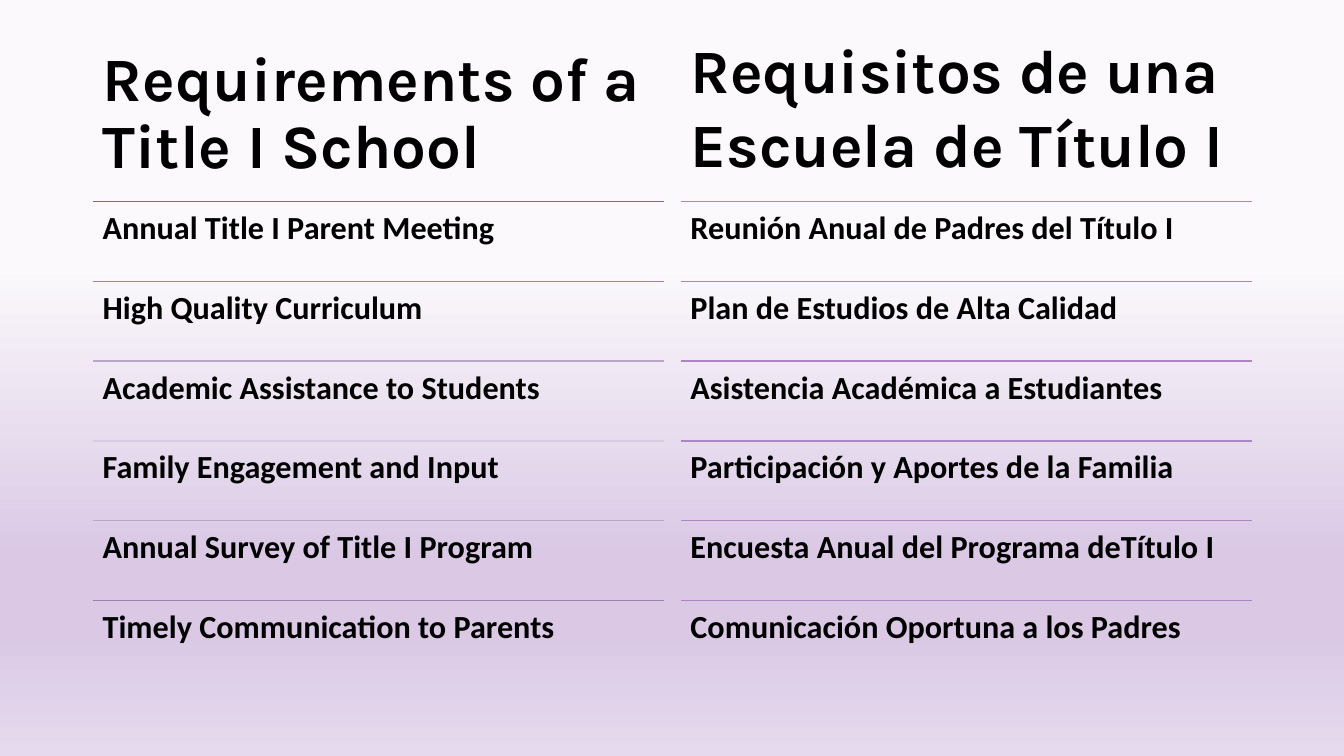
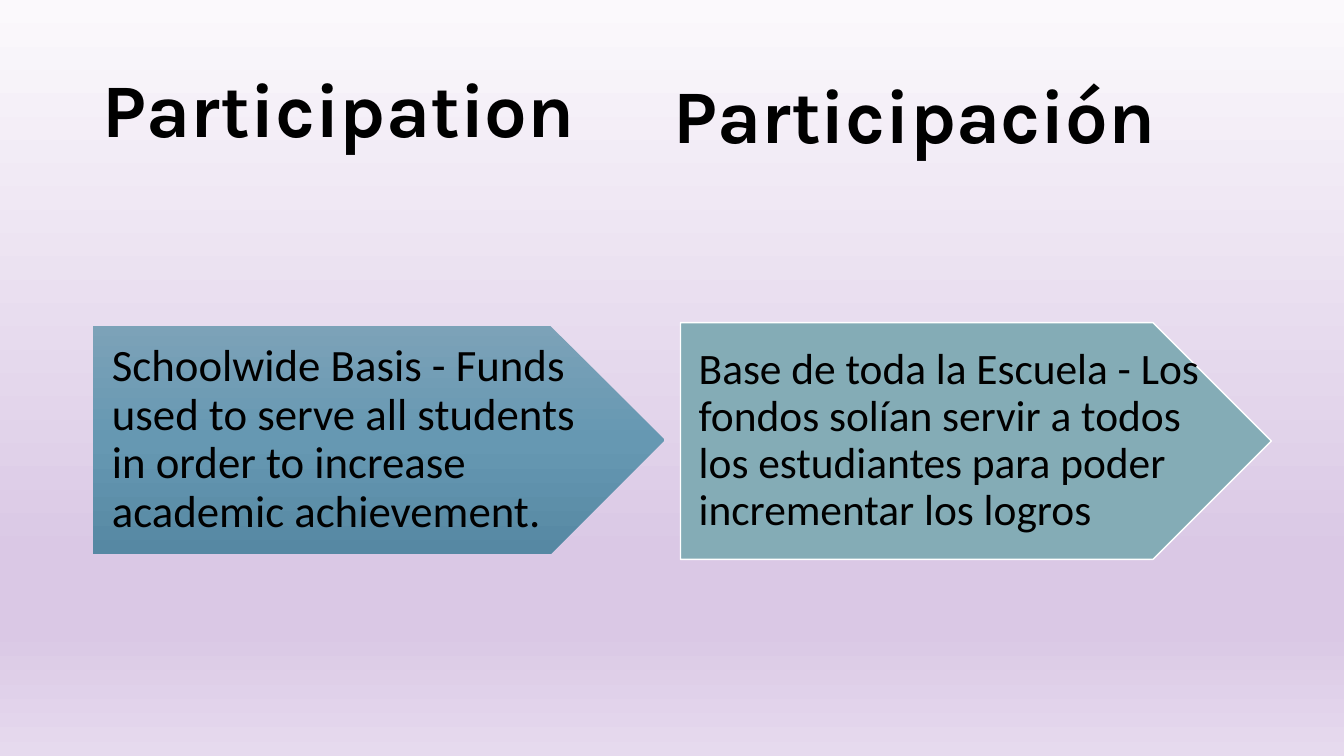
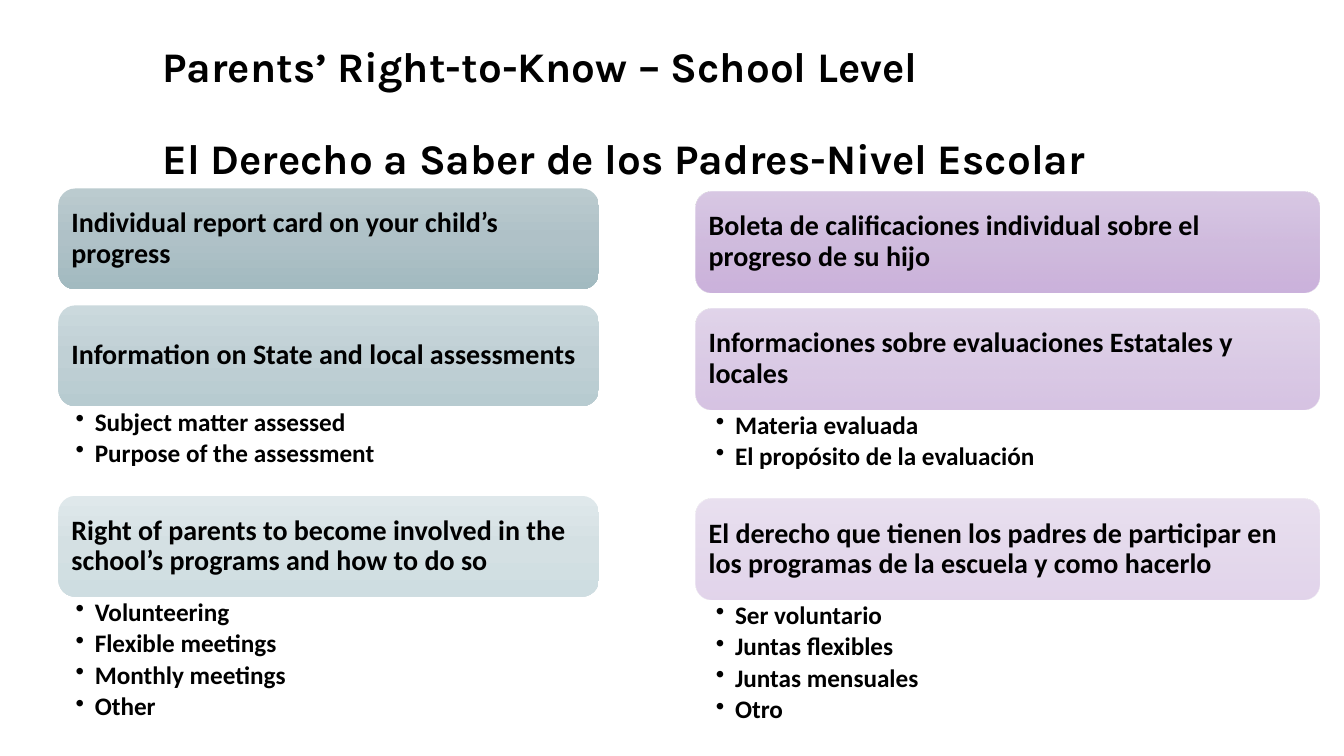
from dataclasses import dataclass

from lxml import etree
from pptx import Presentation
from pptx.dml.color import RGBColor
from pptx.enum.shapes import MSO_CONNECTOR, MSO_SHAPE
from pptx.enum.text import MSO_ANCHOR, MSO_AUTO_SIZE, PP_ALIGN
from pptx.oxml.ns import qn
from pptx.util import Inches, Pt

TOP, MIDDLE, BOTTOM = MSO_ANCHOR.TOP, MSO_ANCHOR.MIDDLE, MSO_ANCHOR.BOTTOM
LEFT = PP_ALIGN.LEFT
NO_AUTOFIT = MSO_AUTO_SIZE.NONE
STRAIGHT = MSO_CONNECTOR.STRAIGHT
ARROW, CARD = MSO_SHAPE.PENTAGON, MSO_SHAPE.ROUNDED_RECTANGLE
TITLE_ONLY = 5

COLORS = {
    "text": "000000",
    "white": "FFFFFF",
    "pale": "FBF9FC",
    "lilac": "DAC8E5",
    "light_lilac": "E6DAEE",
    "spanish_rule": "AD84C6",
    "spanish_arrow": "84ACB6",
}
ENGLISH_RULES = ["806292", "9E81B1", "BCA5CB", "D9CBE3", "BCA5CB", "9E81B1"]
ARROW_BLUES = ["7CA2B8", "6698B2", "5688A3"]
CARD_TEALS = [
    ["BBCBCF", "AFC1C7", "A2BAC0"],
    ["CBD9DD", "C0D0D5", "B7CBD0"],
    ["DFE8EB", "D4E0E3", "CEDDE1"],
]
CARD_PURPLES = ["D5C3E2", "CCB6DB", "C6AAD8"]
CARD_OPACITIES = [90, 70, 50]
HEADING_FONT, BODY_FONT = "Karla", "Calibri"


@dataclass
class Box:
    """Left, top, width and height in inches."""
    left: float
    top: float
    width: float
    height: float

    def lengths(self):
        return [Inches(v) for v in (self.left, self.top, self.width, self.height)]


@dataclass
class TextStyle:
    size: float
    font: str = BODY_FONT
    bold: bool = True
    line_spacing: float = 0.9
    space_before: float = 0
    space_after: float = 0
    bullet_indent: float = 0
    anchor: MSO_ANCHOR = TOP
    insets: tuple = (0.1, 0.05, 0.1, 0.05)


@dataclass
class RequirementColumn:
    left: float
    rule_colors: list
    requirements: list


@dataclass
class Right:
    heading: str
    details: list


@dataclass
class RightsColumn:
    left: float
    top: float
    width: float
    detail_inset: float
    gradients: list
    opacities: list
    rights: list


ROW_STYLE = TextStyle(23, insets=(0.1,) * 4)
CARD_STYLE = TextStyle(20, anchor=MIDDLE, insets=(0.08,) * 4)


def rgb(hex_color: str) -> RGBColor:
    return RGBColor.from_string(hex_color)


def add_bullet(paragraph, indent: float) -> None:
    properties = paragraph._p.get_or_add_pPr()
    properties.set("marL", str(Inches(indent)))
    properties.set("indent", str(-Inches(indent)))
    bullet = etree.Element(qn("a:buChar"), char="•")
    defaults = properties.find(qn("a:defRPr"))
    defaults.addprevious(bullet)


def write(frame, lines: list, style: TextStyle) -> None:
    frame.word_wrap = True
    frame.auto_size = NO_AUTOFIT
    frame.vertical_anchor = style.anchor
    (frame.margin_left, frame.margin_top,
     frame.margin_right, frame.margin_bottom) = map(Inches, style.insets)
    frame.text = "\n".join(lines)
    for index, paragraph in enumerate(frame.paragraphs):
        paragraph.alignment = LEFT
        paragraph.line_spacing = style.line_spacing
        paragraph.space_before = Pt(style.space_before if index else 0)
        paragraph.space_after = Pt(style.space_after)
        font = paragraph.font
        font.name, font.size, font.bold = style.font, Pt(style.size), style.bold
        font.color.rgb = rgb(COLORS["text"])
        if style.bullet_indent:
            add_bullet(paragraph, style.bullet_indent)


def fill_down(fill, owner, stops: list, opacity: int = 100) -> None:
    """Give fill a top-to-bottom gradient of (percent, colour) stops."""
    fill.gradient()
    fill.gradient_angle = 270
    stop_list = next(owner.iter(qn("a:gsLst")))
    for old_stop in list(stop_list):
        stop_list.remove(old_stop)
    for percent, color in stops:
        stop = etree.SubElement(stop_list, qn("a:gs"), pos=str(percent * 1000))
        shade = etree.SubElement(stop, qn("a:srgbClr"), val=color)
        if opacity < 100:
            etree.SubElement(shade, qn("a:alpha"), val=str(opacity * 1000))


def add_slide(deck, title: list, box: Box, style: TextStyle):
    slide = deck.slides.add_slide(deck.slide_layouts[TITLE_ONLY])
    heading = slide.shapes.title
    heading.left, heading.top, heading.width, heading.height = box.lengths()
    write(heading.text_frame, title, style)
    return slide


def set_lilac_background(slide, first_stop: int) -> None:
    stops = [(first_stop, COLORS["pale"]), (74, COLORS["lilac"]),
             (83, COLORS["lilac"]), (100, COLORS["light_lilac"])]
    fill_down(slide.background.fill, slide._element, stops)


def add_text(slide, lines: list, box: Box, style: TextStyle) -> None:
    write(slide.shapes.add_textbox(*box.lengths()).text_frame, lines, style)


def add_rule(slide, left: float, top: float, width: float, color: str) -> None:
    rule = slide.shapes.add_connector(
        STRAIGHT, Inches(left), Inches(top), Inches(left + width), Inches(top))
    rule.line.color.rgb = rgb(color)
    rule.line.width = Pt(1)
    etree.SubElement(rule._element.spPr, qn("a:effectLst"))


def add_panel(slide, preset, text: str, box: Box, style: TextStyle):
    panel = slide.shapes.add_shape(preset, *box.lengths())
    panel.shadow.inherit = False
    panel.line.fill.background()
    write(panel.text_frame, [text], style)
    return panel


def shade_panel(panel, colors: list, opacity: int = 100) -> None:
    fill_down(panel.fill, panel._element, list(zip((0, 50, 100), colors)), opacity)


def add_requirements(slide, column: RequirementColumn) -> None:
    top, width, row_height = 2, 5.67, 4.75 / 6
    for row, (color, requirement) in enumerate(
            zip(column.rule_colors, column.requirements)):
        row_top = top + row * row_height
        add_rule(slide, column.left, row_top, width, color)
        add_text(slide, [requirement],
                 Box(column.left, row_top, width, row_height), ROW_STYLE)


def add_rights(slide, column: RightsColumn) -> None:
    card_height, gap = 1, 0.16
    detail_style = TextStyle(18, space_after=3, bullet_indent=0.19,
                             insets=(column.detail_inset, 0.03, 0.14, 0.03))
    detail_heights = {0: gap, 2: 0.89, 4: 1.36}
    top = column.top
    for right, gradient, opacity in zip(
            column.rights, column.gradients, column.opacities):
        card = add_panel(slide, CARD, right.heading,
                         Box(column.left, top, column.width, card_height), CARD_STYLE)
        shade_panel(card, gradient, opacity)
        top += card_height
        height = detail_heights[len(right.details)]
        if right.details:
            add_text(slide, right.details,
                     Box(column.left, top, column.width, height), detail_style)
        top += height


def build_requirements(deck) -> None:
    slide = add_slide(deck, ["Requirements of a Title I School"],
                      Box(0.92, 0.4, 5.67, 1.45),
                      TextStyle(44, HEADING_FONT, anchor=BOTTOM))
    set_lilac_background(slide, 35)
    add_requirements(slide, RequirementColumn(0.92, ENGLISH_RULES, [
        "Annual Title I Parent Meeting",
        "High Quality Curriculum",
        "Academic Assistance to Students",
        "Family Engagement and Input",
        "Annual Survey of Title I Program",
        "Timely Communication to Parents",
    ]))
    add_requirements(slide, RequirementColumn(6.75, [COLORS["spanish_rule"]] * 6, [
        "Reunión Anual de Padres del Título I",
        "Plan de Estudios de Alta Calidad",
        "Asistencia Académica a Estudiantes",
        "Participación y Aportes de la Familia",
        "Encuesta Anual del Programa deTítulo I",
        "Comunicación Oportuna a los Padres",
    ]))
    add_text(slide, ["Requisitos de una Escuela de Título I"],
             Box(6.75, 0.27, 6.01, 1.58),
             TextStyle(44, HEADING_FONT, line_spacing=1.0))


def build_participation(deck) -> None:
    slide = add_slide(deck, ["Participation"], Box(0.92, 0.4, 11.5, 1.45),
                      TextStyle(54, HEADING_FONT, anchor=MIDDLE))
    set_lilac_background(slide, 0)
    english = add_panel(
        slide, ARROW,
        "Schoolwide Basis - Funds used to serve all students in order to "
        "increase academic achievement.",
        Box(0.92, 3.23, 5.67, 2.27),
        TextStyle(32, bold=False, anchor=MIDDLE, insets=(0.19, 0.09, 0.05, 0.09)))
    shade_panel(english, ARROW_BLUES)
    spanish = add_panel(
        slide, ARROW,
        "Base de toda la Escuela - Los fondos solían servir a todos los "
        "estudiantes para poder incrementar los logros",
        Box(6.75, 3.2, 5.86, 2.35),
        TextStyle(31, bold=False, anchor=MIDDLE, insets=(0.18, 0.09, 0.05, 0.09)))
    spanish.fill.solid()
    spanish.fill.fore_color.rgb = rgb(COLORS["spanish_arrow"])
    spanish.line.color.rgb = rgb(COLORS["white"])
    spanish.line.width = Pt(1)
    add_text(slide, ["Participación"], Box(6.58, 0.62, 6.5, 1.01),
             TextStyle(54, HEADING_FONT, line_spacing=1.0))


def build_right_to_know(deck) -> None:
    slide = add_slide(
        deck,
        ["Parents’ Right-to-Know – School Level",
         "El Derecho a Saber de los Padres-Nivel Escolar"],
        Box(1.51, 0.21, 10.3, 1.41),
        TextStyle(30.1, HEADING_FONT, space_before=33, anchor=MIDDLE,
                  insets=(0.1, 0.5, 0.1, 0.05)))
    slide.background.fill.solid()
    slide.background.fill.fore_color.rgb = rgb(COLORS["white"])
    add_rights(slide, RightsColumn(0.58, 1.87, 5.36, 0.17, CARD_TEALS, [100] * 3, [
        Right("Individual report card on your child’s progress", []),
        Right("Information on State and local assessments",
              ["Subject matter assessed", "Purpose of the assessment"]),
        Right("Right of parents to become involved in the school’s programs "
              "and how to do so",
              ["Volunteering", "Flexible meetings", "Monthly meetings", "Other"]),
    ]))
    add_rights(slide, RightsColumn(
        6.9, 1.9, 6.19, 0.2, [CARD_PURPLES] * 3, CARD_OPACITIES, [
            Right("Boleta de calificaciones individual sobre el progreso de su hijo", []),
            Right("Informaciones sobre evaluaciones Estatales y locales",
                  ["Materia evaluada", "El propósito de la evaluación"]),
            Right("El derecho que tienen los padres de participar en los programas "
                  "de la escuela y como hacerlo",
                  ["Ser voluntario", "Juntas flexibles", "Juntas mensuales", "Otro"]),
        ]))


def main() -> None:
    deck = Presentation()
    deck.slide_width, deck.slide_height = Inches(13.33), Inches(7.5)
    build_requirements(deck)
    build_participation(deck)
    build_right_to_know(deck)
    deck.save("out.pptx")


if __name__ == "__main__":
    main()
